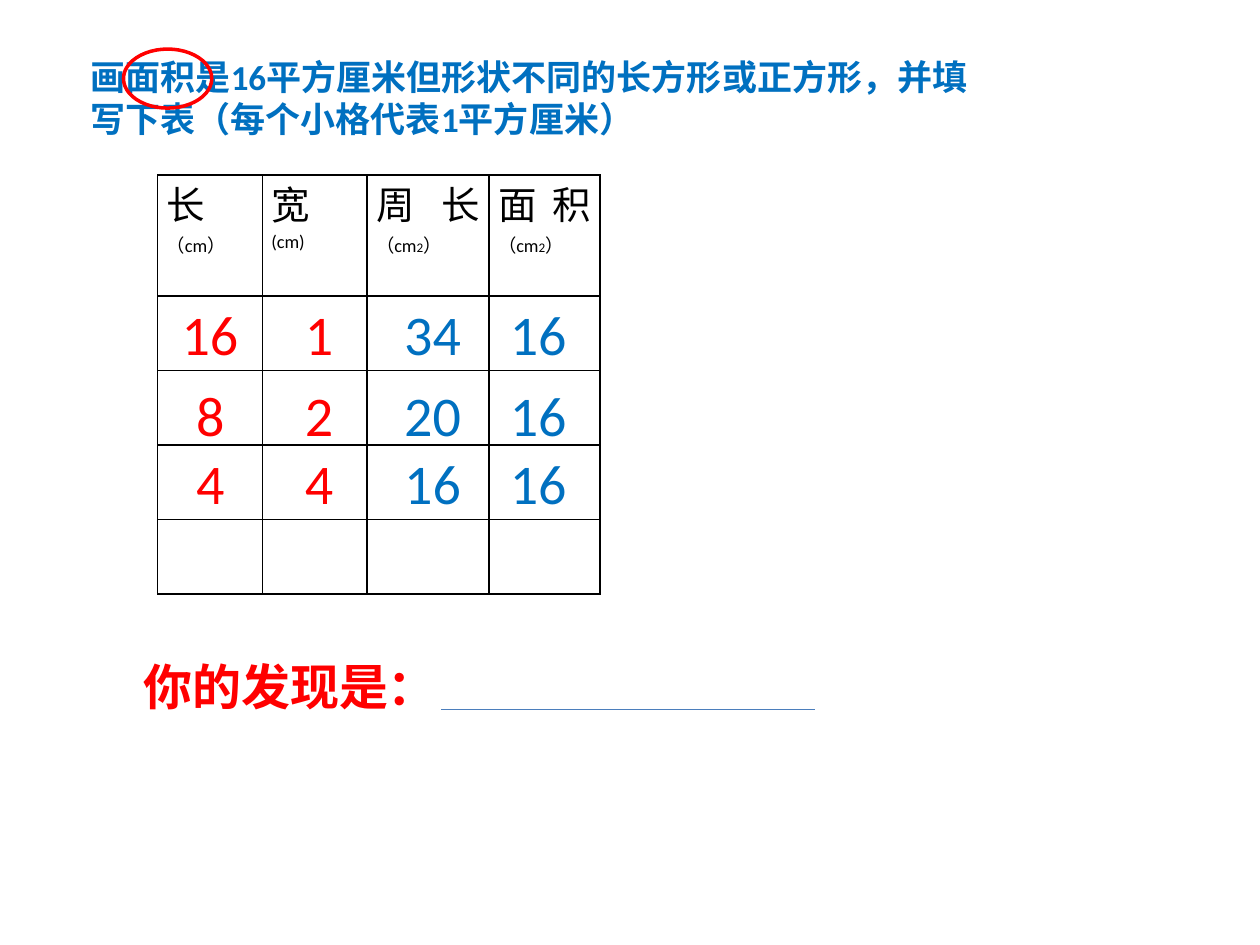
from dataclasses import dataclass

from lxml.etree import SubElement
from pptx import Presentation
from pptx.dml.color import RGBColor
from pptx.enum.shapes import MSO_CONNECTOR, MSO_SHAPE
from pptx.enum.text import MSO_ANCHOR, MSO_AUTO_SIZE, PP_ALIGN
from pptx.oxml.ns import qn
from pptx.util import Cm, Pt

BLUE = RGBColor(0x00, 0x70, 0xC0)
RED = RGBColor(0xFF, 0x00, 0x00)
BLACK = RGBColor(0x00, 0x00, 0x00)
LINE_BLUE = RGBColor(0x4B, 0x7E, 0xBC)
FONT = "Calibri"


@dataclass(frozen=True)
class Box:
    left: float
    top: float
    width: float
    height: float

    def lengths(self) -> tuple:
        return Cm(self.left), Cm(self.top), Cm(self.width), Cm(self.height)


@dataclass(frozen=True)
class Piece:
    text: str
    size: float


@dataclass(frozen=True)
class Column:
    width: float
    answer_center: float
    answer_color: RGBColor
    heading: tuple[tuple[Piece, ...], ...]


@dataclass(frozen=True)
class AnswerRow:
    top: float
    values: tuple[str, ...]


SQUARE_UNIT = (Piece("（cm", 10.5), Piece("2", 7.5), Piece("）", 10.5))
COLUMNS = (
    Column(2.11, 4.25, RED, ((Piece("长", 22), Piece("（cm）", 10.5)),)),
    Column(2.11, 6.44, RED, ((Piece("宽", 22),), (Piece("(cm)", 10.5),))),
    Column(2.46, 8.74, BLUE, ((Piece("周长", 22), *SQUARE_UNIT),)),
    Column(2.24, 10.87, BLUE, ((Piece("面积", 22), *SQUARE_UNIT),)),
)
ANSWERS = (
    AnswerRow(5.92, ("16", "1", "34", "16")),
    AnswerRow(7.54, ("8", "2", "20", "16")),
    AnswerRow(8.92, ("4", "4", "16", "16")),
)
HEADING_HEIGHT = 2.44
ROW_HEIGHT = 1.5
ROW_COUNT = 5
DIGIT_WIDTH = 0.59
SIDE_INSETS = 0.5


def style_run(run, size: float, color: RGBColor, bold: bool = False) -> None:
    run.font.name = FONT
    run.font.size = Pt(size)
    run.font.color.rgb = color
    run.font.bold = bold


def write_text(shape, text: str, size: float, color: RGBColor,
               bold: bool = False, wrap: bool = True) -> None:
    frame = shape.text_frame
    frame.text = text
    frame.word_wrap = wrap
    frame.auto_size = MSO_AUTO_SIZE.NONE
    frame.vertical_anchor = MSO_ANCHOR.TOP
    paragraph = frame.paragraphs[0]
    paragraph.alignment = PP_ALIGN.LEFT
    style_run(paragraph.runs[0], size, color, bold)


def add_label(slide, box: Box, text: str, size: float, color: RGBColor,
              bold: bool = False, wrap: bool = True) -> None:
    write_text(slide.shapes.add_textbox(*box.lengths()), text, size, color, bold, wrap)


def set_borders(cell) -> None:
    properties = cell._tc.get_or_add_tcPr()
    for index, side in enumerate(("a:lnL", "a:lnR", "a:lnT", "a:lnB")):
        line = properties.makeelement(qn(side), {"w": str(Pt(1))})
        fill = SubElement(line, qn("a:solidFill"))
        SubElement(fill, qn("a:srgbClr"), {"val": str(BLACK)})
        properties.insert(index, line)


def write_heading(cell, column: Column) -> None:
    frame = cell.text_frame
    for index, pieces in enumerate(column.heading):
        paragraph = frame.add_paragraph() if index else frame.paragraphs[0]
        paragraph.alignment = PP_ALIGN.JUSTIFY
        for piece in pieces:
            run = paragraph.add_run()
            run.text = piece.text
            style_run(run, piece.size, BLACK)


def add_measure_table(slide) -> None:
    width = sum(column.width for column in COLUMNS)
    height = HEADING_HEIGHT + (ROW_COUNT - 1) * ROW_HEIGHT
    box = Box(3.18, 3.53, width, height)
    table = slide.shapes.add_table(ROW_COUNT, len(COLUMNS), *box.lengths()).table
    table.first_row = False
    table.horz_banding = False
    for index, row in enumerate(table.rows):
        row.height = Cm(ROW_HEIGHT if index else HEADING_HEIGHT)
    for index, column in enumerate(COLUMNS):
        table.columns[index].width = Cm(column.width)
    for cell in table.iter_cells():
        cell.fill.background()
        cell.margin_left = cell.margin_right = Cm(0.18)
        cell.margin_top = cell.margin_bottom = 0
        set_borders(cell)
    for index, column in enumerate(COLUMNS):
        write_heading(table.cell(0, index), column)


def add_answers(slide) -> None:
    for row in ANSWERS:
        for column, value in zip(COLUMNS, row.values):
            width = SIDE_INSETS + DIGIT_WIDTH * len(value)
            box = Box(column.answer_center - width / 2, row.top, width, 1.62)
            add_label(slide, box, value, 32, column.answer_color, wrap=False)


def add_answer_line(slide) -> None:
    line = slide.shapes.add_connector(
        MSO_CONNECTOR.STRAIGHT, Cm(8.89), Cm(14.3), Cm(16.43), Cm(14.3))
    line.line.color.rgb = LINE_BLUE
    line.line.width = Pt(0.75)
    SubElement(line._element.spPr, qn("a:effectLst"))


def add_keyword_ring(slide) -> None:
    ring = slide.shapes.add_shape(MSO_SHAPE.OVAL, *Box(2.49, 0.99, 1.78, 1.19).lengths())
    ring.shadow.inherit = False
    ring.fill.background()
    ring.line.color.rgb = RED
    ring.line.width = Pt(2)


def main() -> None:
    presentation = Presentation()
    presentation.slide_width = Cm(25.4)
    presentation.slide_height = Cm(19.05)
    slide = presentation.slides.add_slide(presentation.slide_layouts[5])
    title = slide.shapes.title
    title.left, title.top, title.width, title.height = Box(1.57, 0.99, 18.47, 1.96).lengths()
    write_text(title, "画面积是16平方厘米但形状不同的长方形或正方形，并填写下表（每个小格代表1平方厘米）",
               20, BLUE, bold=True)
    add_measure_table(slide)
    add_label(slide, Box(2.64, 13.11, 9.12, 1.45), "你的发现是：", 28, RED, bold=True)
    add_answer_line(slide)
    add_keyword_ring(slide)
    add_answers(slide)
    presentation.save("out.pptx")


if __name__ == "__main__":
    main()
